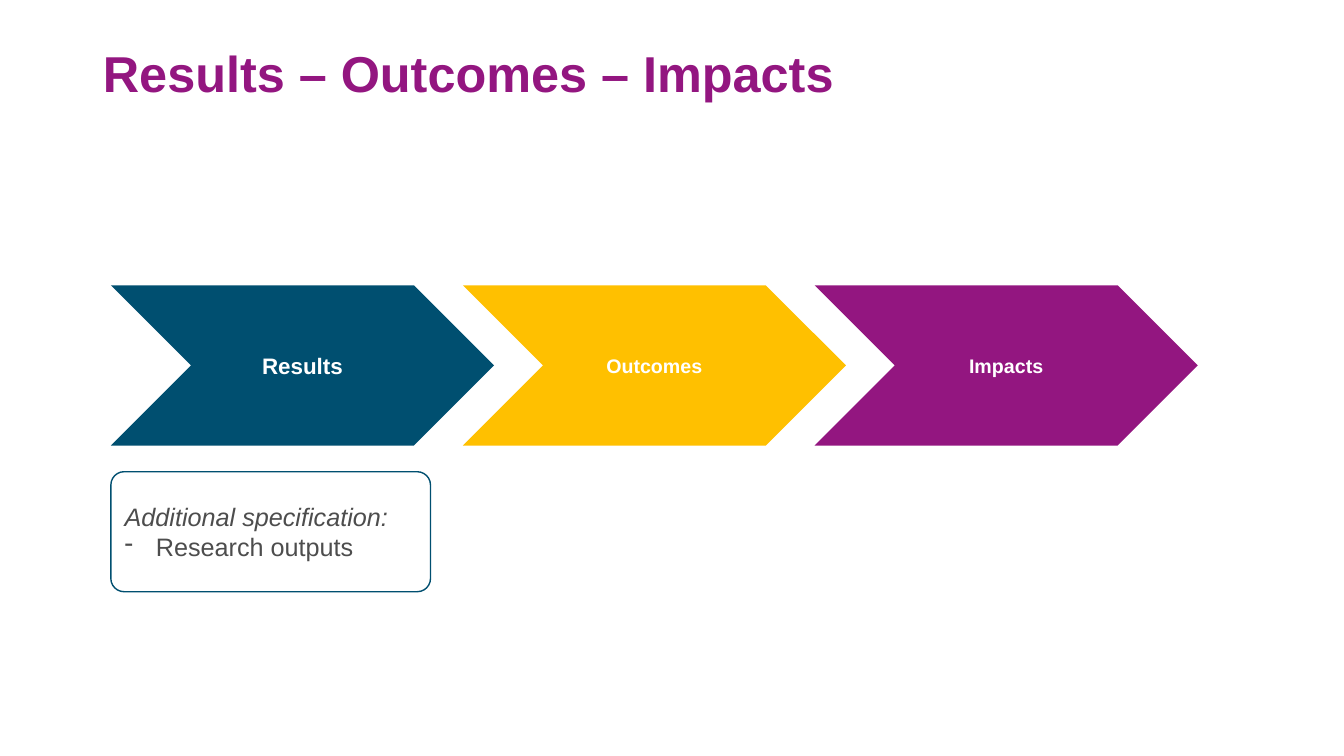
from lxml import etree
from pptx import Presentation
from pptx.dml.color import RGBColor
from pptx.enum.shapes import MSO_SHAPE
from pptx.enum.text import MSO_ANCHOR, PP_ALIGN
from pptx.oxml.ns import qn
from pptx.util import Inches, Pt

COLORS = {"purple": "931680", "blue": "004F70", "yellow": "FFC000",
          "white": "FFFFFF", "gray": "4D4D4D"}


def rgb(name):
    return RGBColor.from_string(COLORS[name])


def write(p, text, size=18, color="gray", bold=False, italic=False, align=PP_ALIGN.LEFT):
    p.alignment = align
    r = p.add_run()
    r.text = text
    r.font.name = "Arial"
    r.font.size = Pt(size)
    r.font.bold = bold
    r.font.italic = italic
    r.font.color.rgb = rgb(color)


prs = Presentation()
prs.slide_width, prs.slide_height = Inches(13.33), Inches(7.5)
s = prs.slides.add_slide(prs.slide_layouts[5])

# Title
title = s.shapes.title
title.left, title.top = Inches(0.92), Inches(0.51)
title.width, title.height = Inches(11.5), Inches(0.52)
tf = title.text_frame
tf.vertical_anchor = MSO_ANCHOR.BOTTOM
tf.margin_bottom = 0
tf.paragraphs[0].line_spacing = 0.9
write(tf.paragraphs[0], "Results – Outcomes – Impacts", size=36, color="purple", bold=True)

# Chain of chevrons
stages = [("Results", "blue", 16), ("Outcomes", "yellow", 14), ("Impacts", "purple", 14)]
for i, (label, color, size) in enumerate(stages):
    sp = s.shapes.add_shape(MSO_SHAPE.CHEVRON, Inches(1.1 + 3.49 * i), Inches(2.83),
                            Inches(3.8), Inches(1.59))
    sp.shadow.inherit = False
    sp.fill.solid()
    sp.fill.fore_color.rgb = rgb(color)
    sp.line.fill.background()
    sp.text_frame.vertical_anchor = MSO_ANCHOR.MIDDLE
    write(sp.text_frame.paragraphs[0], label, size=size, color="white", bold=True,
          align=PP_ALIGN.CENTER)

# Specification box
box = s.shapes.add_shape(MSO_SHAPE.ROUNDED_RECTANGLE, Inches(1.1), Inches(4.68),
                         Inches(3.17), Inches(1.19))
box.adjustments[0] = 0.11
box.shadow.inherit = False
box.fill.solid()
box.fill.fore_color.rgb = rgb("white")
box.line.color.rgb = rgb("blue")
box.line.width = Pt(1)
tf = box.text_frame
tf.vertical_anchor = MSO_ANCHOR.MIDDLE
write(tf.paragraphs[0], "Additional specification:", italic=True)

p = tf.add_paragraph()
pPr = p._p.get_or_add_pPr()
pPr.set("marL", str(Inches(0.31)))
pPr.set("indent", str(-Inches(0.31)))
etree.SubElement(pPr, qn("a:buChar"), char="-")
write(p, "Research outputs")

prs.save("out.pptx")
